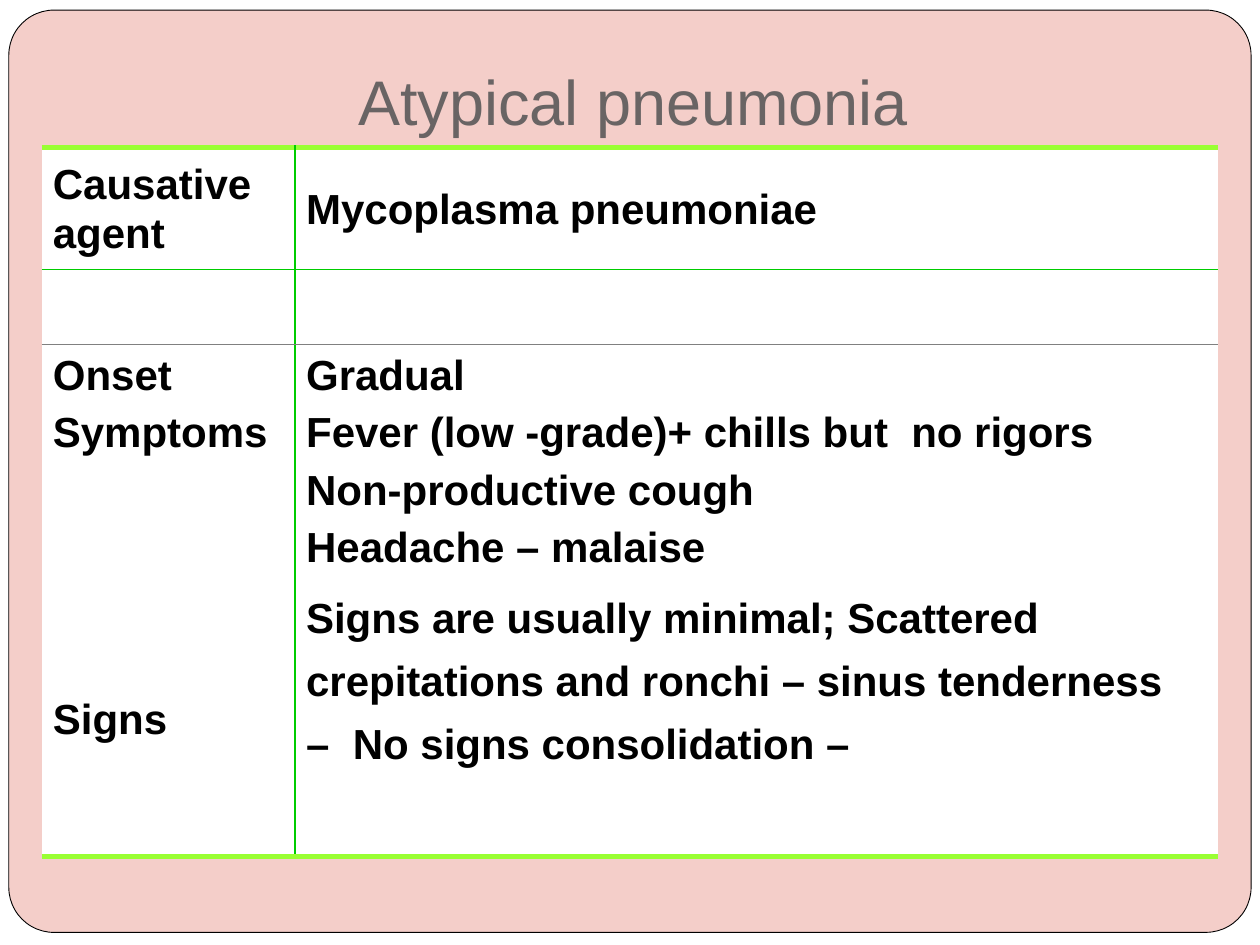
import lxml.etree
import pptx
import pptx.dml.color
import pptx.enum.shapes
import pptx.enum.text
import pptx.oxml.ns
import pptx.util

Inches = pptx.util.Inches
Pt = pptx.util.Pt
ANCHOR = pptx.enum.text.MSO_ANCHOR
ALIGN = pptx.enum.text.PP_ALIGN

CELL_FONT = {"size": Pt(24), "name": "Arial", "bold": True}
TITLE_FONT = {"size": Pt(36), "name": "Arial"}
MARGINS = {"margin_left": Inches(0.09), "margin_right": Inches(0.09),
           "margin_top": Inches(0.05), "margin_bottom": Inches(0.05)}
OUTER = ("99FF33", 3)
INNER = ("00CC00", 1)
HAIRLINE = ("808080", 0.5)
GAP = 4.8
LINE = 28
SIGNS_GAP = GAP + 4 * (LINE + GAP)  # leaves four lines free above "Signs"

# Each paragraph is text, line spacing and space before, in points
ROWS = [
    (0.97, ANCHOR.MIDDLE, [
        [("Causative agent", LINE, 0)],
        [("Mycoplasma pneumoniae", LINE, 0)]]),
    (0.59, ANCHOR.TOP, [[], []]),
    (4.07, ANCHOR.TOP, [
        [("Onset", LINE, 0), ("Symptoms", LINE, GAP), ("Signs", LINE, SIGNS_GAP)],
        [("Gradual", LINE, 0),
         ("Fever (low -grade)+ chills but  no rigors", LINE, GAP),
         ("Non-productive cough", LINE, GAP),
         ("Headache – malaise", LINE, GAP),
         ("Signs are usually minimal; Scattered crepitations and ronchi – "
          "sinus tenderness  –  No signs consolidation –", 36, GAP)]]),
]
COLUMN_WIDTHS = [2.01, 7.33]
ROW_LINES = [OUTER, INNER, HAIRLINE, OUTER]
COLUMN_LINES = [None, INNER, None]


def color(value):
    return pptx.dml.color.RGBColor.from_string(value)


def apply(target, values):
    for name, value in values.items():
        setattr(target, name, value)


def fill_solid(target, value):
    target.fill.solid()
    target.fill.fore_color.rgb = color(value)


def set_borders(cell, borders):
    """Draw left, right, top and bottom borders, ahead of the cell's fill."""
    properties = cell._tc.get_or_add_tcPr()
    qn = pptx.oxml.ns.qn
    for index, (tag, border) in enumerate(zip(("lnL", "lnR", "lnT", "lnB"), borders)):
        line = lxml.etree.Element(qn("a:" + tag))
        properties.insert(index, line)
        if border is None:
            lxml.etree.SubElement(line, qn("a:noFill"))
            continue
        value, width = border
        line.set("w", str(Pt(width)))
        solid = lxml.etree.SubElement(line, qn("a:solidFill"))
        lxml.etree.SubElement(solid, qn("a:srgbClr")).set("val", value)


def add_panel(slide, left, top, width, height):
    panel = slide.shapes.add_shape(
        pptx.enum.shapes.MSO_SHAPE.ROUNDED_RECTANGLE, left, top, width, height)
    panel.adjustments[0] = 0.049
    panel.shadow.inherit = False
    fill_solid(panel, "F4CEC9")
    panel.line.color.rgb = color("000000")
    panel.line.width = Pt(0.5)


def add_title(slide, left, top, width, height):
    frame = slide.shapes.add_textbox(left, top, width, height).text_frame
    apply(frame, {"word_wrap": True, "vertical_anchor": ANCHOR.MIDDLE,
                  "margin_bottom": Inches(0.1)})
    paragraph = frame.paragraphs[0]
    paragraph.text = "Atypical pneumonia"
    paragraph.alignment = ALIGN.CENTER
    apply(paragraph.font, TITLE_FONT)
    paragraph.font.color.rgb = color("696464")


def fill_cell(cell, paragraphs, anchor):
    apply(cell, {**MARGINS, "vertical_anchor": anchor})
    fill_solid(cell, "FFFFFF")
    for index, (text, spacing, before) in enumerate(paragraphs):
        frame = cell.text_frame
        paragraph = frame.add_paragraph() if index else frame.paragraphs[0]
        paragraph.text = text
        apply(paragraph, {"line_spacing": Pt(spacing), "space_before": Pt(before)})
        apply(paragraph.font, CELL_FONT)
        paragraph.font.color.rgb = color("000000")


def add_features_table(slide, left, top, width, height):
    table = slide.shapes.add_table(
        len(ROWS), len(COLUMN_WIDTHS), left, top, width, height).table
    apply(table, {"first_row": False, "horz_banding": False})
    for column, column_width in zip(table.columns, COLUMN_WIDTHS):
        column.width = Inches(column_width)
    for r, (row_height, anchor, contents) in enumerate(ROWS):
        table.rows[r].height = Inches(row_height)
        for c, paragraphs in enumerate(contents):
            cell = table.cell(r, c)
            fill_cell(cell, paragraphs, anchor)
            set_borders(cell, COLUMN_LINES[c:c + 2] + ROW_LINES[r:r + 2])


def main():
    presentation = pptx.Presentation()
    presentation.slide_width = Inches(10)
    presentation.slide_height = Inches(7.5)
    slide = presentation.slides.add_slide(presentation.slide_layouts[6])
    fill_solid(slide.background, "FFFFFF")
    add_panel(slide, Inches(0.07), Inches(0.08), Inches(9.86), Inches(7.32))
    add_title(slide, Inches(0.9), Inches(0.31), Inches(8.25), Inches(1.02))
    add_features_table(slide, Inches(0.33), Inches(1.17), Inches(9.34), Inches(5.63))
    presentation.save("out.pptx")


if __name__ == "__main__":
    main()
